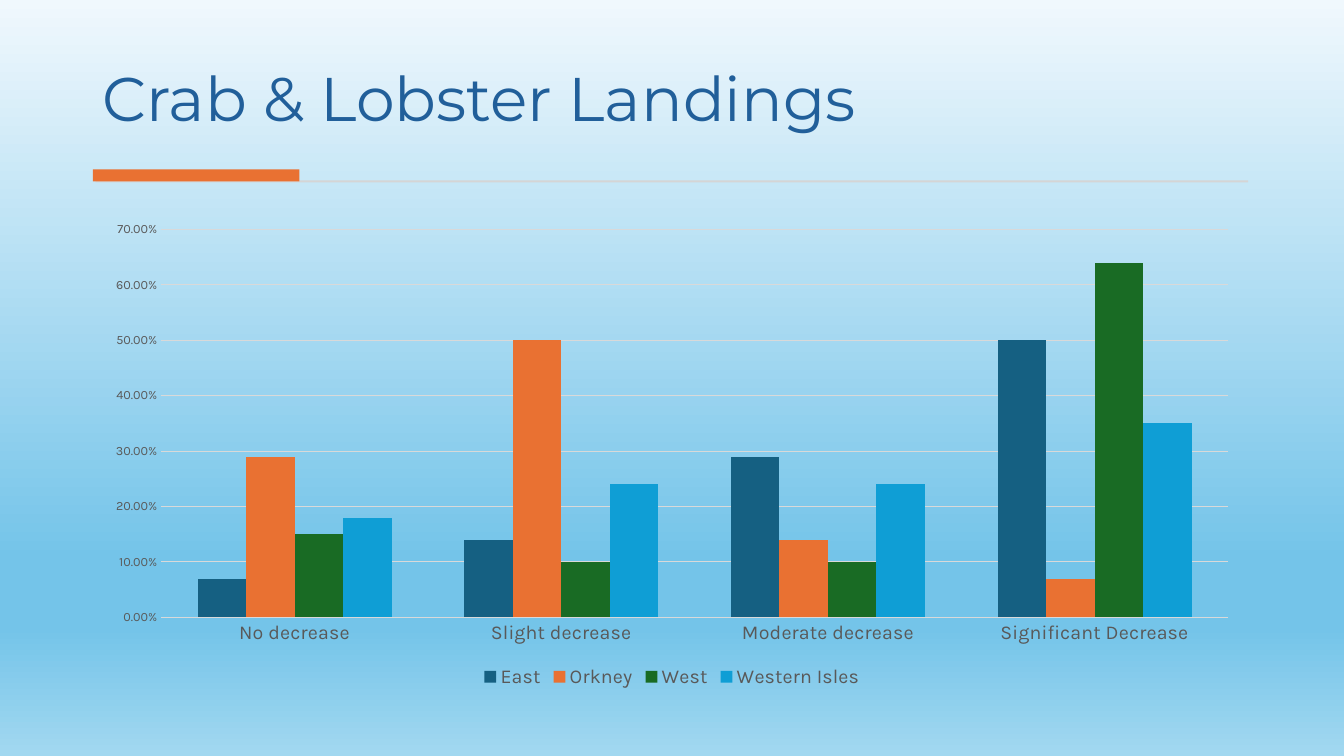
from lxml import etree
from pptx import Presentation
from pptx.chart import data
from pptx.dml.color import RGBColor
from pptx.enum import chart as charts, shapes, text
from pptx.oxml.ns import qn
from pptx.util import Inches, Pt

SKY = [(0, "F0F8FD"), (74, "74C4E9"), (83, "74C4E9"), (100, "A2D8F0")]
DECREASES = ["No decrease", "Slight decrease", "Moderate decrease", "Significant Decrease"]
REGIONS = [
    ("East", "156082", (0.07, 0.14, 0.29, 0.5)),
    ("Orkney", "E97132", (0.29, 0.5, 0.14, 0.07)),
    ("West", "196B24", (0.15, 0.1, 0.1, 0.64)),
    ("Western Isles", "0F9ED5", (0.18, 0.24, 0.24, 0.35)),
]


def color(hex_code):
    return RGBColor.from_string(hex_code)


def style_font(font, name, size, hex_code):
    font.name = name
    font.size = Pt(size)
    font.color.rgb = color(hex_code)


def paint_background(slide):
    fill = slide.background.fill
    fill.gradient()
    fill.gradient_angle = 270  # top to bottom
    stops = slide._element.find(".//" + qn("a:gsLst"))
    stops.clear()
    for percent, hex_code in SKY:
        stop = etree.SubElement(stops, qn("a:gs"), pos=str(percent * 1000))
        etree.SubElement(stop, qn("a:srgbClr"), val=hex_code)


def add_heading(slide, left, top, width, height):
    heading = slide.shapes.add_textbox(Inches(left), Inches(top), Inches(width), Inches(height))
    frame = heading.text_frame
    frame.word_wrap = True
    frame.vertical_anchor = text.MSO_ANCHOR.BOTTOM
    frame.text = "Crab & Lobster Landings"
    line = frame.paragraphs[0]
    line.line_spacing = 0.9
    style_font(line.runs[0].font, "Montserrat", 44, "215F9A")


def add_bar(slide, left, top, width, height, hex_code):
    bar = slide.shapes.add_shape(shapes.MSO_SHAPE.RECTANGLE, Inches(left), Inches(top),
                                 Inches(width), Inches(height))
    bar.shadow.inherit = False
    bar.fill.solid()
    bar.fill.fore_color.rgb = color(hex_code)
    bar.line.fill.background()


def add_divider(slide, left, top, width):
    add_bar(slide, left + 0.03, top + 0.11, width - 0.06, 0.02, "D5D5D5")
    add_bar(slide, left, top, 2.05, 0.12, "E97132")


def add_landings_chart(slide, left, top, width, height):
    landings = data.CategoryChartData(number_format="0.00%")
    landings.categories = DECREASES
    for region, _, shares in REGIONS:
        landings.add_series(region, shares)
    chart = slide.shapes.add_chart(
        charts.XL_CHART_TYPE.COLUMN_CLUSTERED, Inches(left), Inches(top),
        Inches(width), Inches(height), landings).chart
    style_font(chart.font, "Karla", 10, "000000")
    chart.has_title = False

    # Columns
    columns = chart.plots[0]
    columns.gap_width = 150
    columns.overlap = 0
    columns.vary_by_categories = False
    for series, (_, hex_code, _) in zip(columns.series, REGIONS):
        series.format.fill.solid()
        series.format.fill.fore_color.rgb = color(hex_code)

    # Axes
    for axis, size in ((chart.category_axis, 14), (chart.value_axis, 9)):
        axis.major_tick_mark = axis.minor_tick_mark = charts.XL_TICK_MARK.NONE
        axis.format.line.fill.background()
        style_font(axis.tick_labels.font, "Karla", size, "595959")
    shares_axis = chart.value_axis
    shares_axis.minimum_scale, shares_axis.maximum_scale = 0, 0.7
    shares_axis.major_unit = 0.1
    shares_axis.tick_labels.number_format = "0.00%"
    shares_axis.tick_labels.number_format_is_linked = False
    grid = shares_axis.major_gridlines.format.line
    grid.color.rgb = color("D9D9D9")
    grid.width = Pt(0.75)

    # Legend
    chart.has_legend = True
    chart.legend.position = charts.XL_LEGEND_POSITION.BOTTOM
    chart.legend.include_in_layout = False
    style_font(chart.legend.font, "Karla", 14, "595959")


def main():
    deck = Presentation()
    deck.slide_width, deck.slide_height = Inches(13.33), Inches(7.5)
    slide = deck.slides.add_slide(deck.slide_layouts[6])
    paint_background(slide)
    add_heading(slide, 0.92, 0.28, 11.49, 1.11)
    add_divider(slide, 0.92, 1.68, 11.49)
    add_landings_chart(slide, 0.92, 2.11, 11.49, 4.76)
    deck.save("out.pptx")


if __name__ == "__main__":
    main()
